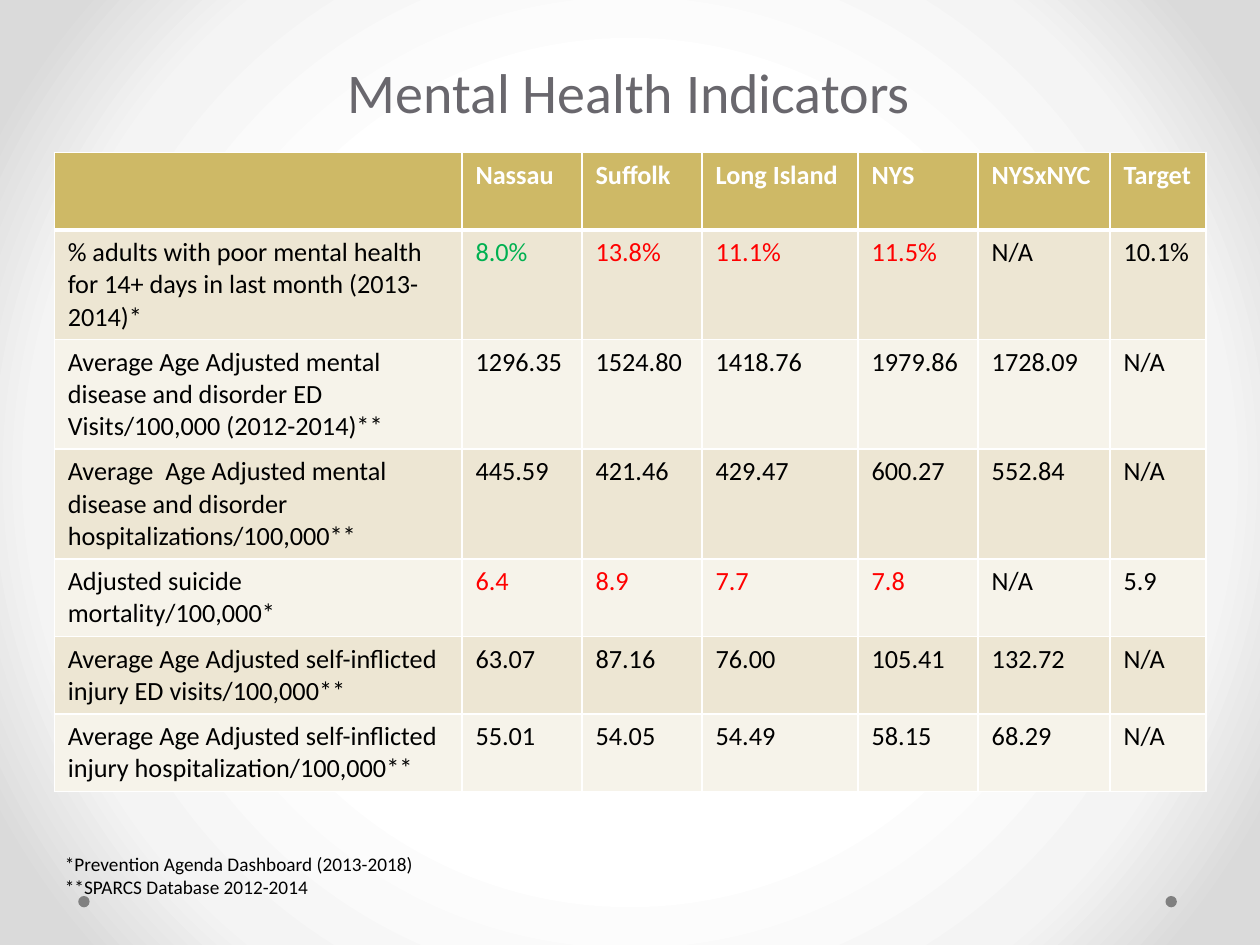
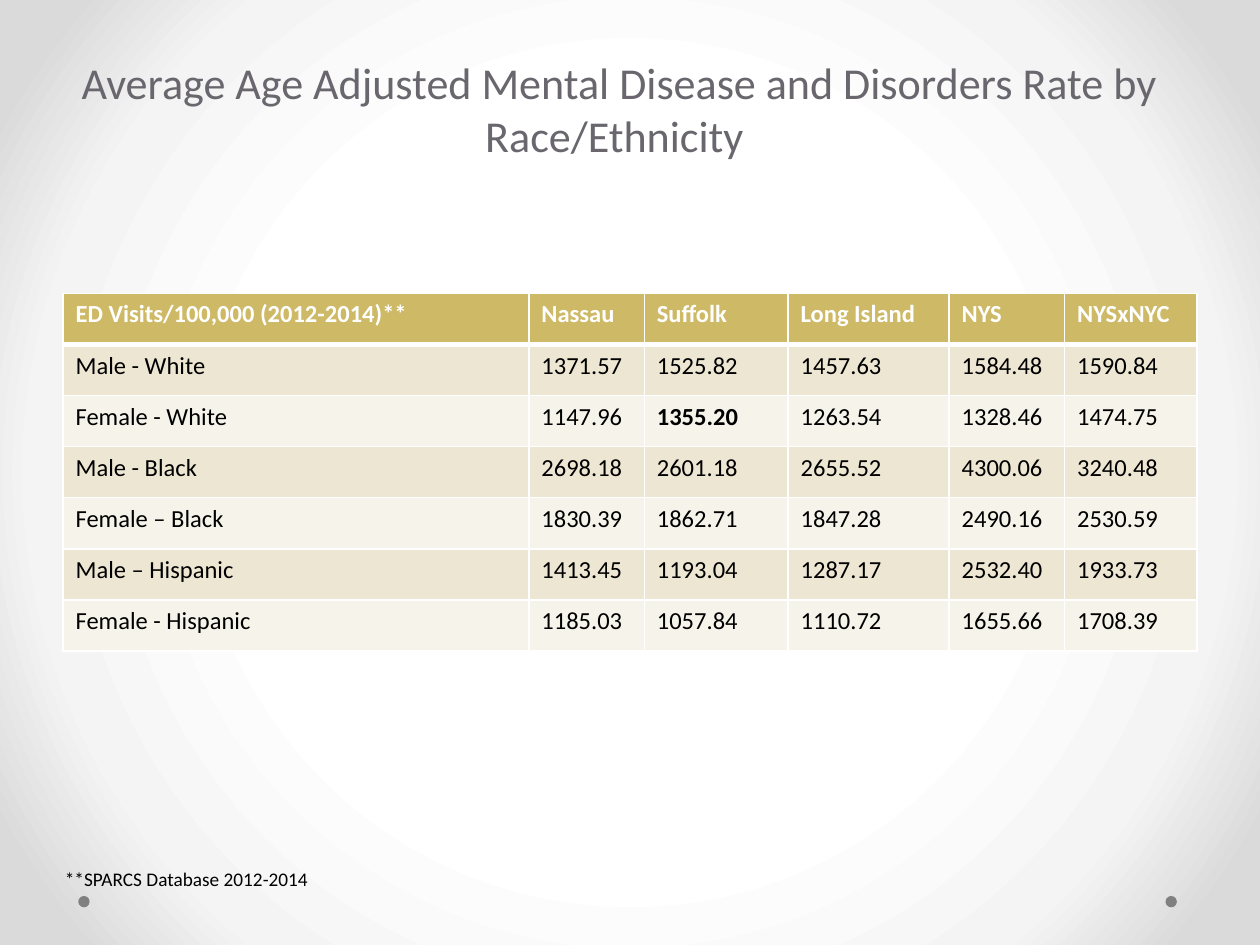
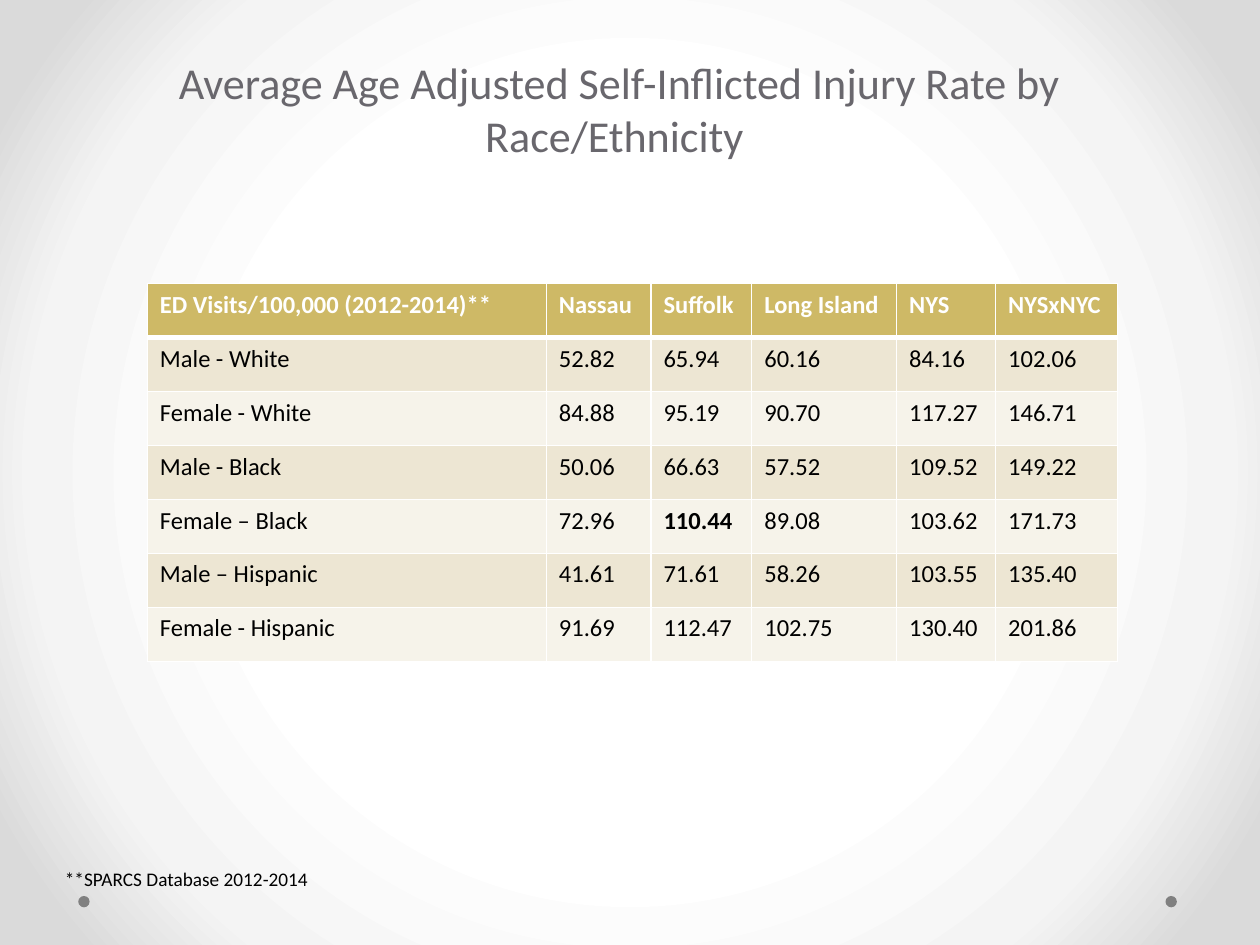
import pptx
import pptx.util
import pptx.dml.color
import pptx.enum.shapes
import pptx.enum.text
import pptx.oxml
import pptx.oxml.ns

Pt = pptx.util.Pt
FONT = "Calibri"
WHITE, BLACK, GRAY, DOT_GRAY = "FFFFFF", "000000", "69676D", "808080"
GOLD, SAND, CREAM = "CEB966", "EDE6D3", "F6F3EA"
GOOD, BAD = {"color": "00B050"}, {"color": "FF0000"}
STRONG = {"bold": True}

BACKGROUND_STOPS = [(50, "FFFFFF"), (76, "F4F4F4"), (92, "DADADA")]
DOT_LEFTS, DOT_TOP, DOT_SIZE = (44.7, 666), 512, 6.5
WRAPPED_TITLE = {"frame": (30, 23.76, 648, 72), "size": 25.2, "wrap": True, "anchor": "BOTTOM"}
SPARCS = "**SPARCS Database 2012-2014"
SPARCS_FRAME = (30, 491.9, 155.5, 20.6)
RATE_HEADER = ["ED Visits/100,000 (2012-2014)**", "Nassau", "Suffolk", "Long Island", "NYS", "NYSxNYC"]

SLIDES = [
    {
        "title": "Mental Health Indicators",
        "title_format": {"frame": (190, 29.5, 339, 46), "size": 32},
        "sources": ["*Prevention Agenda Dashboard (2013-2018)", SPARCS],
        "source_frame": (30, 483.4, 215.4, 33.9),
        "table_corner": (31, 87.1),
        "columns": [233, 68.6, 68.6, 89.2, 68.6, 75.4, 54.7],
        "row_heights": [44.34, 62.64, 62.64, 62.64, 44.34, 44.34, 44.34],
        "size": 15,
        "margins": (7.75, 3.87),
        "rows": [
            ["", "Nassau", "Suffolk", "Long Island", "NYS", "NYSxNYC", "Target"],
            ["% adults with poor mental health for 14+ days in last month (2013-2014)*",
             "8.0%", "13.8%", "11.1%", "11.5%", "N/A", "10.1%"],
            ["Average Age Adjusted mental disease and disorder ED Visits/100,000 (2012-2014)**",
             "1296.35", "1524.80", "1418.76", "1979.86", "1728.09", "N/A"],
            ["Average  Age Adjusted mental disease and disorder hospitalizations/100,000**",
             "445.59", "421.46", "429.47", "600.27", "552.84", "N/A"],
            ["Adjusted suicide mortality/100,000*", "6.4", "8.9", "7.7", "7.8", "N/A", "5.9"],
            ["Average Age Adjusted self-inflicted injury ED visits/100,000**",
             "63.07", "87.16", "76.00", "105.41", "132.72", "N/A"],
            ["Average Age Adjusted self-inflicted injury hospitalization/100,000**",
             "55.01", "54.05", "54.49", "58.15", "68.29", "N/A"],
        ],
        "highlights": {
            (1, 1): GOOD, (1, 2): BAD, (1, 3): BAD, (1, 4): BAD,
            (4, 1): BAD, (4, 2): BAD, (4, 3): BAD, (4, 4): BAD,
        },
    },
    {
        "title": "Average Age Adjusted Mental Disease and Disorders Rate by Race/Ethnicity ",
        "title_format": WRAPPED_TITLE,
        "sources": [SPARCS],
        "source_frame": SPARCS_FRAME,
        "table_corner": (36, 167.6),
        "columns": [266.2, 66, 82.2, 92, 66, 75.6],
        "row_heights": [29.2] * 7,
        "size": 14,
        "margins": (7.2, 3.6),
        "rows": [
            RATE_HEADER,
            ["Male - White", "1371.57", "1525.82", "1457.63", "1584.48", "1590.84"],
            ["Female - White", "1147.96", "1355.20", "1263.54", "1328.46", "1474.75"],
            ["Male - Black", "2698.18", "2601.18", "2655.52", "4300.06", "3240.48"],
            ["Female – Black", "1830.39", "1862.71", "1847.28", "2490.16", "2530.59"],
            ["Male – Hispanic", "1413.45", "1193.04", "1287.17", "2532.40", "1933.73"],
            ["Female - Hispanic", "1185.03", "1057.84", "1110.72", "1655.66", "1708.39"],
        ],
        "highlights": {(2, 2): STRONG},
    },
    {
        "title": "Average Age Adjusted Self-Inflicted Injury Rate by Race/Ethnicity ",
        "title_format": WRAPPED_TITLE,
        "sources": [SPARCS],
        "source_frame": SPARCS_FRAME,
        "table_corner": (84.2, 162),
        "columns": [228, 59.8, 57.6, 82.8, 56.6, 69.6],
        "row_heights": [30.86] * 7,
        "size": 14,
        "margins": (7.2, 3.6),
        "rows": [
            RATE_HEADER,
            ["Male - White", "52.82", "65.94", "60.16", "84.16", "102.06"],
            ["Female - White", "84.88", "95.19", "90.70", "117.27", "146.71"],
            ["Male - Black", "50.06", "66.63", "57.52", "109.52", "149.22"],
            ["Female – Black", "72.96", "110.44", "89.08", "103.62", "171.73"],
            ["Male – Hispanic", "41.61", "71.61", "58.26", "103.55", "135.40"],
            ["Female - Hispanic", "91.69", "112.47", "102.75", "130.40", "201.86"],
        ],
        "highlights": {(4, 2): STRONG},
    },
]


def rgb(value):
    return pptx.dml.color.RGBColor.from_string(value)


def write(para, text, size, color=BLACK, bold=False, align="LEFT"):
    para.alignment = getattr(pptx.enum.text.PP_ALIGN, align)
    span = para.add_run()
    span.text = text
    span.font.name = FONT
    span.font.size = Pt(size)
    span.font.bold = bold
    span.font.color.rgb = rgb(color)


def add_text(page, lines, frame, wrap=False, anchor="TOP", **style):
    box = page.shapes.add_textbox(*map(Pt, frame)).text_frame
    box.word_wrap = wrap
    box.vertical_anchor = getattr(pptx.enum.text.MSO_ANCHOR, anchor)
    if not wrap:
        box.auto_size = pptx.enum.text.MSO_AUTO_SIZE.SHAPE_TO_FIT_TEXT
    for index, line in enumerate(lines):
        write(box.add_paragraph() if index else box.paragraphs[0], line, **style)


def paint_background(master):
    master.background.fill.gradient()
    gradient = master.element.find(".//" + pptx.oxml.ns.qn("a:gradFill"))
    stops = "".join(
        f'<a:gs pos="{position * 1000}"><a:srgbClr val="{color}"/></a:gs>'
        for position, color in BACKGROUND_STOPS
    )
    radial = pptx.oxml.parse_xml(
        f'<a:gradFill {pptx.oxml.ns.nsdecls("a")} rotWithShape="1"><a:gsLst>{stops}</a:gsLst>'
        '<a:path path="circle"><a:fillToRect l="50000" t="50000" r="50000" b="50000"/></a:path>'
        "</a:gradFill>"
    )
    gradient.getparent().replace(gradient, radial)


def add_dots(page):
    for left in DOT_LEFTS:
        dot = page.shapes.add_shape(
            pptx.enum.shapes.MSO_SHAPE.OVAL, Pt(left), Pt(DOT_TOP), Pt(DOT_SIZE), Pt(DOT_SIZE))
        dot.shadow.inherit = False
        dot.fill.solid()
        dot.fill.fore_color.rgb = rgb(DOT_GRAY)
        dot.line.fill.background()


def set_borders(cell, row):
    widths = {"L": 1, "R": 1, "T": 3 if row == 1 else 1, "B": 3 if row == 0 else 1}
    properties = cell._tc.get_or_add_tcPr()
    for side, width in widths.items():
        properties.append(pptx.oxml.parse_xml(
            f'<a:ln{side} {pptx.oxml.ns.nsdecls("a")} w="{Pt(width)}">'
            f'<a:solidFill><a:srgbClr val="{WHITE}"/></a:solidFill></a:ln{side}>'
        ))


def add_indicator_table(page, content):
    rows, columns, heights = content["rows"], content["columns"], content["row_heights"]
    frame = (*content["table_corner"], sum(columns), sum(heights))
    table = page.shapes.add_table(len(rows), len(columns), *map(Pt, frame)).table
    table.horz_banding = False
    for column, width in zip(table.columns, columns):
        column.width = Pt(width)
    for table_row, height in zip(table.rows, heights):
        table_row.height = Pt(height)
    side, edge = map(Pt, content["margins"])
    for row, values in enumerate(rows):
        for column, value in enumerate(values):
            cell = table.cell(row, column)
            cell.margin_left = cell.margin_right = side
            cell.margin_top = cell.margin_bottom = edge
            set_borders(cell, row)
            cell.fill.solid()
            cell.fill.fore_color.rgb = rgb(GOLD if row == 0 else SAND if row % 2 else CREAM)
            style = {"color": WHITE, "bold": True} if row == 0 else content["highlights"].get((row, column), {})
            if value:
                write(cell.text_frame.paragraphs[0], value, content["size"], **style)


def main():
    deck = pptx.Presentation()
    deck.slide_width, deck.slide_height = Pt(720), Pt(540)
    paint_background(deck.slide_master)
    for content in SLIDES:
        page = deck.slides.add_slide(deck.slide_layouts[6])
        add_dots(page)
        add_text(page, [content["title"]], color=GRAY, align="CENTER", **content["title_format"])
        add_indicator_table(page, content)
        add_text(page, content["sources"], content["source_frame"], size=11)
    deck.save("out.pptx")


if __name__ == "__main__":
    main()
